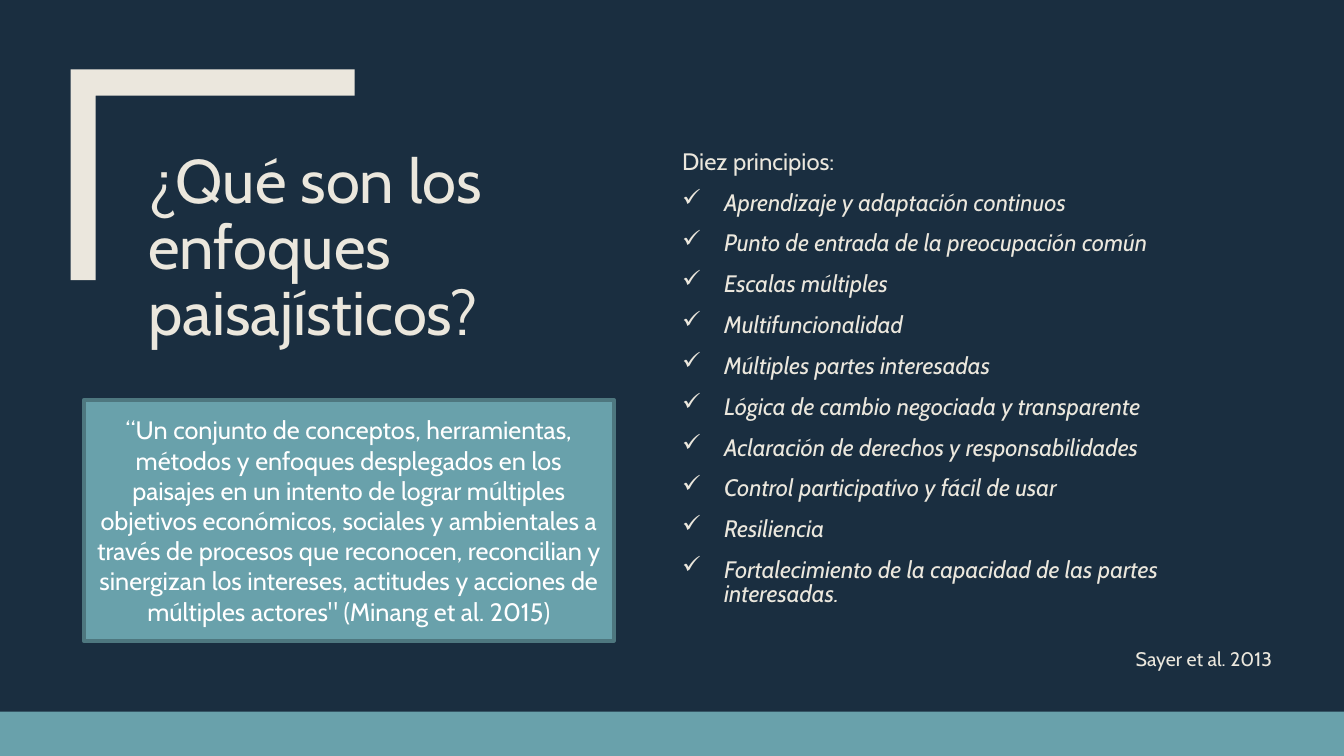
from lxml import etree
from pptx import Presentation
from pptx.dml.color import RGBColor
from pptx.enum.shapes import MSO_SHAPE
from pptx.enum.text import MSO_ANCHOR, MSO_AUTO_SIZE, PP_ALIGN
from pptx.oxml.ns import qn
from pptx.util import Cm, Pt

RECTANGLE = MSO_SHAPE.RECTANGLE
TOP, MIDDLE = MSO_ANCHOR.TOP, MSO_ANCHOR.MIDDLE
LEFT, CENTER = PP_ALIGN.LEFT, PP_ALIGN.CENTER
NO_AUTOFIT = MSO_AUTO_SIZE.NONE

FONT = "Cabin"
TITLE_ONLY = 5
WIDTH, HEIGHT = 33.87, 19.05
COLORS = {
    "navy": "1A2E40",
    "cream": "EBE7DD",
    "teal": "69A1AB",
    "teal_dark": "4E777F",
    "white": "FFFFFF",
}

TITLE = "¿Qué son los enfoques paisajísticos?"
QUOTE = (
    "“Un conjunto de conceptos, herramientas, métodos y enfoques desplegados "
    "en los paisajes en un intento de lograr múltiples objetivos económicos, "
    "sociales y ambientales a través de procesos que reconocen, reconcilian y "
    "sinergizan los intereses, actitudes y acciones de múltiples actores\" "
    "(Minang et al. 2015)"
)
PRINCIPLES = [
    "Aprendizaje y adaptación continuos",
    "Punto de entrada de la preocupación común",
    "Escalas múltiples",
    "Multifuncionalidad",
    "Múltiples partes interesadas",
    "Lógica de cambio negociada y transparente",
    "Aclaración de derechos y responsabilidades",
    "Control participativo y fácil de usar",
    "Resiliencia",
    "Fortalecimiento de la capacidad de las partes interesadas.",
]
BRACKET = [(8.94, 2.41), (8.94, 1.75), (1.78, 1.75),
           (1.78, 7.06), (2.41, 7.06), (2.41, 2.41)]


def rgb(name):
    return RGBColor.from_string(COLORS[name])


def write_text(paragraph, text, size, color="cream", italic=False,
               align=LEFT, line_spacing=1.0, before=0, after=0):
    paragraph.alignment = align
    paragraph.line_spacing = line_spacing
    paragraph.space_before = Pt(before)
    paragraph.space_after = Pt(after)
    run = paragraph.add_run()
    run.text = text
    run.font.name = FONT
    run.font.size = Pt(size)
    run.font.italic = italic
    run.font.color.rgb = rgb(color)


def add_check_bullet(paragraph):
    properties = paragraph._p.get_or_add_pPr()
    properties.set("marL", str(Cm(1.06)))
    properties.set("indent", str(-Cm(1.06)))
    bullet = etree.SubElement(properties, qn("a:buChar"))
    bullet.set("char", "✓")


def prepare_frame(shape, anchor=TOP):
    frame = shape.text_frame
    frame.word_wrap = True
    frame.auto_size = NO_AUTOFIT
    frame.vertical_anchor = anchor
    return frame


def paint(shape, fill, line=None):
    shape.shadow.inherit = False
    shape.fill.solid()
    shape.fill.fore_color.rgb = rgb(fill)
    if line:
        shape.line.color.rgb = rgb(line)
        shape.line.width = Pt(2.75)
    else:
        shape.line.fill.background()


def add_box(slide, left, top, width, height, fill, line=None):
    shape = slide.shapes.add_shape(
        RECTANGLE, Cm(left), Cm(top), Cm(width), Cm(height))
    paint(shape, fill, line)
    return shape


def add_text_frame(slide, left, top, width, height):
    shape = slide.shapes.add_textbox(
        Cm(left), Cm(top), Cm(width), Cm(height))
    return prepare_frame(shape)


def add_bracket(slide):
    points = [(Cm(x), Cm(y)) for x, y in BRACKET]
    builder = slide.shapes.build_freeform(*points[0])
    builder.add_line_segments(points[1:], close=True)
    paint(builder.convert_to_shape(), "cream")


def set_title(slide):
    title = slide.shapes.title
    title.left, title.top = Cm(3.48), Cm(3.68)
    title.width, title.height = Cm(9.88), Cm(12.45)
    frame = prepare_frame(title)
    write_text(frame.paragraphs[0], TITLE, 44, line_spacing=0.89)


def add_principles(slide):
    frame = add_text_frame(slide, 16.94, 3.68, 13.54, 12.45)
    spacing = {"line_spacing": 0.84, "before": 10, "after": 2}
    write_text(frame.paragraphs[0], "Diez principios:", 17, **spacing)
    for principle in PRINCIPLES:
        paragraph = frame.add_paragraph()
        write_text(paragraph, principle, 17, italic=True, **spacing)
        add_check_bullet(paragraph)


def add_quote(slide):
    box = add_box(slide, 2.11, 10.08, 13.36, 6.07, "teal", "teal_dark")
    frame = prepare_frame(box, MIDDLE)
    write_text(frame.paragraphs[0], QUOTE, 18, color="white", align=CENTER)


def main():
    presentation = Presentation()
    presentation.slide_width = Cm(WIDTH)
    presentation.slide_height = Cm(HEIGHT)
    slide = presentation.slides.add_slide(
        presentation.slide_layouts[TITLE_ONLY])
    slide.background.fill.solid()
    slide.background.fill.fore_color.rgb = rgb("navy")

    add_bracket(slide)
    set_title(slide)
    add_principles(slide)
    add_box(slide, 0, 17.93, WIDTH, HEIGHT - 17.93, "teal")
    add_quote(slide)
    credit = add_text_frame(slide, 28.37, 16.18, 5.2, 0.86)
    write_text(credit.paragraphs[0], "Sayer et al. 2013", 14)

    presentation.save("out.pptx")


if __name__ == "__main__":
    main()
